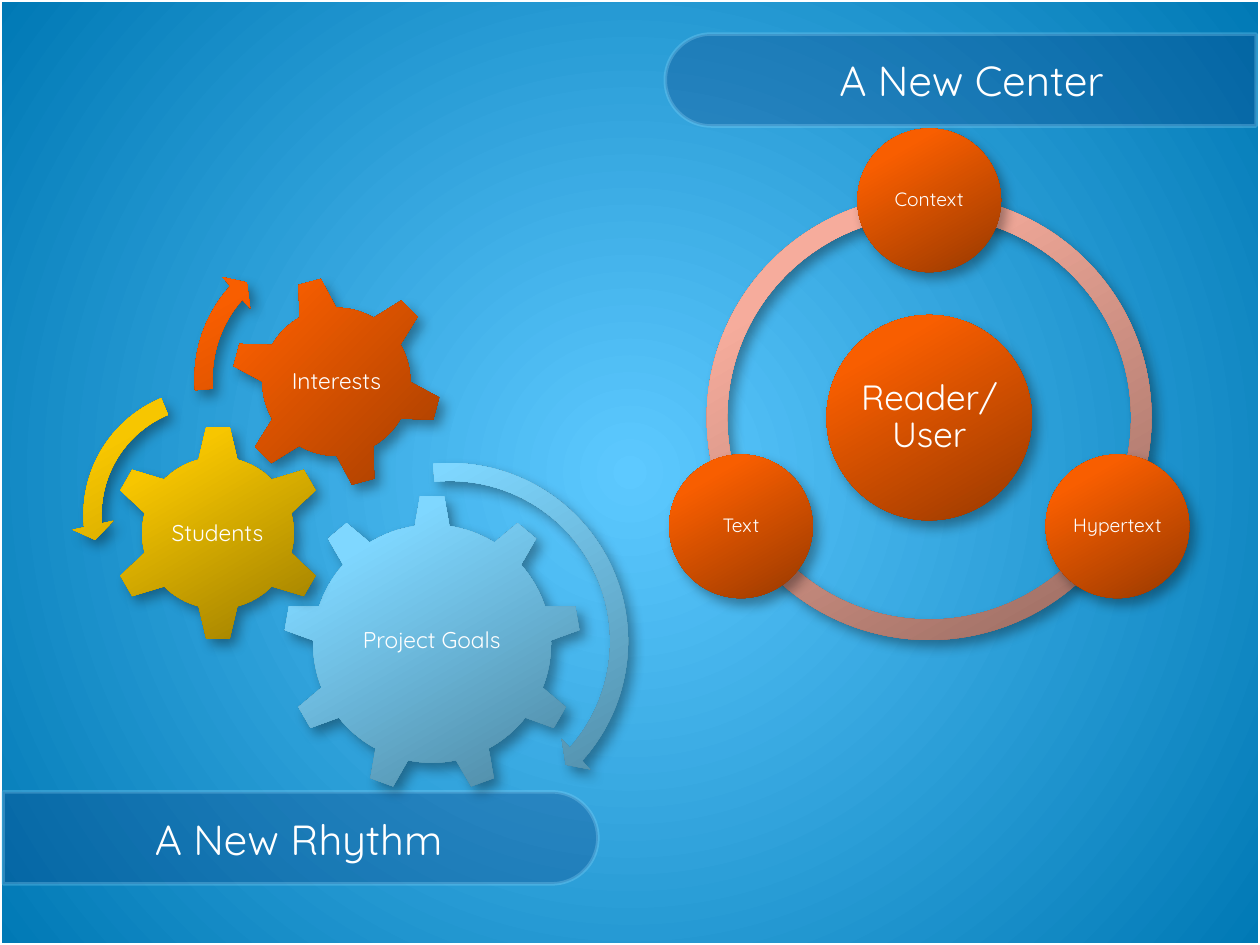
from math import cos, radians, sin

from lxml.etree import SubElement
from pptx import Presentation
from pptx.dml.color import RGBColor
from pptx.enum.shapes import MSO_SHAPE as Shape
from pptx.enum.text import MSO_ANCHOR as Anchor, PP_ALIGN as Align
from pptx.oxml import parse_xml
from pptx.oxml.ns import nsdecls, qn
from pptx.util import Inches, Pt

FONT = "Quicksand"
WHITE = "FFFFFF"

# Gradients: (percent, colour)
ORANGE = [(0, "983900"), (80, "F85E00"), (100, "F95E00")]
PINK = [(0, "96695F"), (80, "F6AC9C"), (100, "F9AB9B")]
BLUE = [(0, "4B849E"), (80, "7FD7FF"), (100, "81D7FF")]
YELLOW = [(0, "977900"), (80, "F7C600"), (100, "F8C700")]
BACKDROP = [(0, "5DC9FF"), (100, "0079B5")]

# Title bars: place, rotation
BARS = [((2.02, 4.29, 0.73, 4.72), 90), ((7.26, -1.71, 0.73, 4.69), 270)]
TITLES = [("A New Center", (5.67, 0.27, 4.08, 0.73)),
          ("A New Rhythm", (0.33, 6.29, 4.08, 0.73))]

# Radial cycle: hub, and satellites with their angles
CENTER = (7.375, 3.315)
ORBIT = 1.725
RING_SIZE = 3.53
RING_ARCS = [(90, 162), (18, 90), (162, 18)]
HUB = ("Reader/User", 1.63, 20)
SATELLITES = [("Context", -90), ("Hypertext", 30), ("Text", 150)]
SATELLITE_SIZE, SATELLITE_FONT = 1.14, 11

# Gears: label, shape, left, top, size, rotation, gradient, label place
GEARS = [
    ("Project Goals", Shape.GEAR_9, 2.25, 3.93, 2.36, 0, BLUE, (2.72, 4.48, 1.41, 1.21)),
    ("Students", Shape.GEAR_6, 0.87, 3.37, 1.72, 0, YELLOW, (1.3, 3.81, 0.85, 0.85)),
    ("Interests", Shape.GEAR_6, 1.83, 2.19, 1.68, 345, ORANGE, (2.2, 2.56, 0.94, 0.94)),
]
# Turning arrows: shape, left, top, size, gradient, adjustments
ARROWS = [
    (Shape.CIRCULAR_ARROW, 2.06, 3.58, 3.02, BLUE, (0.047, 2.99, 25.09, 158.76, 0.055)),
    (Shape.LEFT_CIRCULAR_ARROW, 0.57, 2.99, 2.19, YELLOW, (0.065, 4.3, 104.89, 148.38, 0.075)),
    (Shape.CIRCULAR_ARROW, 1.45, 1.82, 2.37, ORANGE, (0.06, 3.94, 133.14, 105.08, 0.07)),
]


def color(value):
    return RGBColor.from_string(value)


def gradient(stops, direction):
    steps = "".join(f'<a:gs pos="{pos * 1000}"><a:srgbClr val="{value}"/></a:gs>'
                    for pos, value in stops)
    return (f'<a:gradFill {nsdecls("a")} rotWithShape="1"><a:gsLst>{steps}</a:gsLst>'
            f'{direction}</a:gradFill>')


def set_alpha(fill_element, percent):
    tint = fill_element.find(".//" + qn("a:srgbClr"))
    SubElement(tint, qn("a:alpha"), val=str(percent * 1000))


def add_plain(shapes, kind, place, adjustments=(), rotation=0):
    shape = shapes.add_shape(kind, *map(Inches, place))
    shape.shadow.inherit = False
    shape.rotation = rotation
    for index, value in enumerate(adjustments):
        shape.adjustments[index] = value
    return shape


def add_glossy(shapes, kind, place, stops, adjustments=(), rotation=0):
    """Shape with a slanted gradient, no outline and a soft shadow."""
    shape = add_plain(shapes, kind, place, adjustments, rotation)
    shape.line.fill.background()
    properties = shape._element.spPr
    fill = parse_xml(gradient(stops, '<a:lin ang="14400000" scaled="0"/>'))
    properties.find(qn("a:prstGeom")).addnext(fill)
    properties.find(qn("a:effectLst")).append(parse_xml(
        f'<a:outerShdw {nsdecls("a")} blurRad="{Pt(7)}" dist="{Pt(5)}" dir="3000000" '
        'algn="tl" rotWithShape="0"><a:srgbClr val="000000"><a:alpha val="35000"/>'
        '</a:srgbClr></a:outerShdw>'))


def add_text(shapes, text, place, size, inset=None, spacing=None):
    box = shapes.add_textbox(*map(Inches, place))
    frame = box.text_frame
    frame.word_wrap = True
    frame.vertical_anchor = Anchor.MIDDLE
    if inset is not None:
        frame.margin_left = frame.margin_right = Inches(inset)
        frame.margin_top = frame.margin_bottom = Inches(inset)
    para = frame.paragraphs[0]
    para.text = text
    para.alignment = Align.CENTER
    para.line_spacing = spacing
    para.font.size = Pt(size)
    para.font.name = FONT
    para.font.color.rgb = color(WHITE)


def square(x, y, size):
    return x - size / 2, y - size / 2, size, size


def add_disc(shapes, text, x, y, size, font_size):
    add_glossy(shapes, Shape.OVAL, square(x, y, size), ORANGE)
    add_text(shapes, text, square(x, y, size * cos(radians(45))), font_size, 0.02, 0.9)


deck = Presentation()
deck.slide_width, deck.slide_height = Inches(10), Inches(7.5)
page = deck.slides.add_slide(deck.slide_layouts[6])

# Background and frame
center_path = '<a:path path="circle"><a:fillToRect l="50000" t="50000" r="50000" b="50000"/></a:path>'
page._element.cSld.insert(0, parse_xml(
    f'<p:bg {nsdecls("p", "a")}><p:bgPr>{gradient(BACKDROP, center_path)}'
    '<a:effectLst/></p:bgPr></p:bg>'))
frame_shape = add_plain(page.shapes, Shape.RECTANGLE, (0, 0, 10, 7.5))
frame_shape.fill.background()
frame_shape.line.color.rgb = color(WHITE)
frame_shape.line.width = Pt(2)

# Title bars
for place, rotation in BARS:
    bar = add_plain(page.shapes, Shape.ROUND_2_SAME_RECTANGLE, place, (0.5, 0), rotation)
    bar.fill.solid()
    bar.fill.fore_color.rgb = color("073779")
    bar.line.color.rgb = color("8FD9FB")
    bar.line.width = Pt(2)
    for part in ("a:solidFill", "a:ln"):
        set_alpha(bar._element.spPr.find(qn(part)), 30)

# Radial cycle
cycle = page.shapes.add_group_shape().shapes
for start, end in RING_ARCS:
    add_glossy(cycle, Shape.BLOCK_ARC, square(*CENTER, RING_SIZE), PINK, (start, end, 0.046))
hub_text, hub_size, hub_font = HUB
add_disc(cycle, hub_text, *CENTER, hub_size, hub_font)
for text, angle in SATELLITES:
    x = CENTER[0] + ORBIT * cos(radians(angle))
    y = CENTER[1] + ORBIT * sin(radians(angle))
    add_disc(cycle, text, x, y, SATELLITE_SIZE, SATELLITE_FONT)

# Gears and turning arrows
machine = page.shapes.add_group_shape().shapes
for text, kind, left, top, size, rotation, stops, label_place in GEARS:
    add_glossy(machine, kind, (left, top, size, size), stops, rotation=rotation)
    add_text(machine, text, label_place, 13, 0.02, 0.9)
for kind, left, top, size, stops, adjustments in ARROWS:
    add_glossy(machine, kind, (left, top, size, size), stops, adjustments)

# Titles
for text, place in TITLES:
    add_text(page.shapes, text, place, 24)

deck.save("out.pptx")
